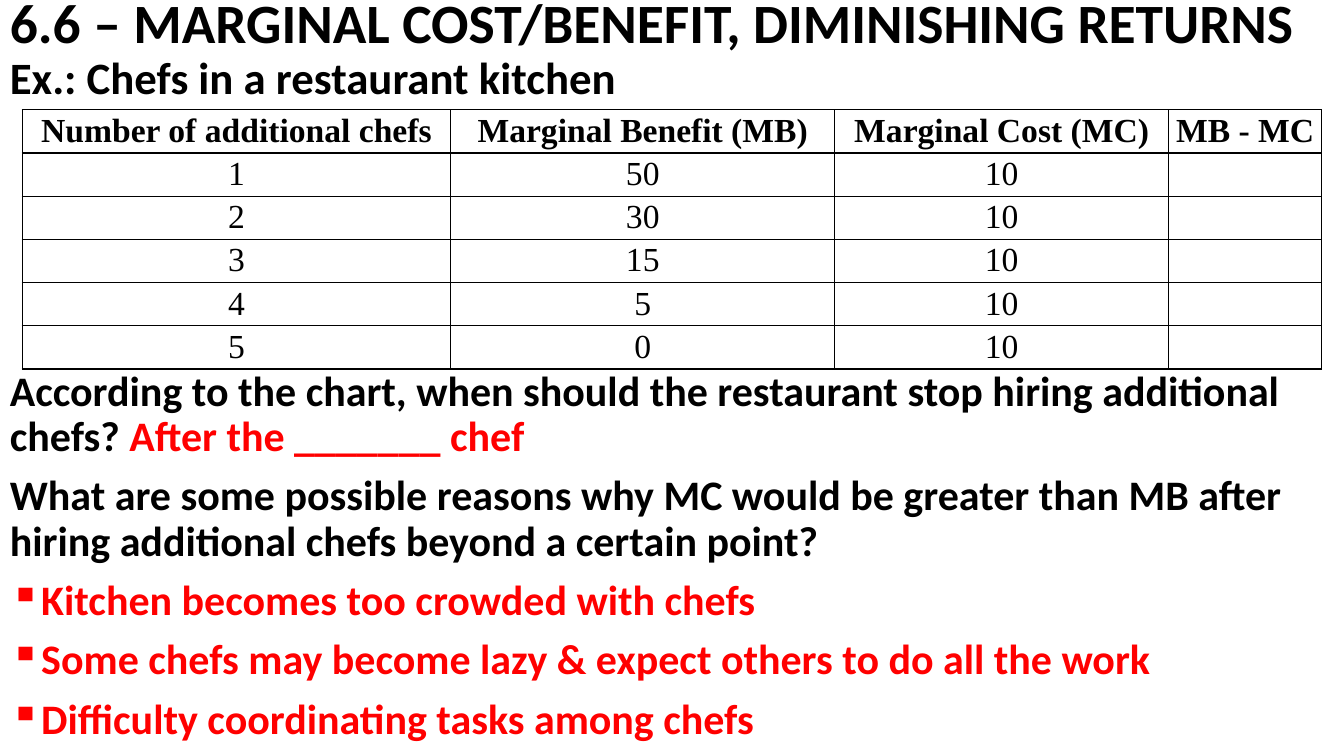
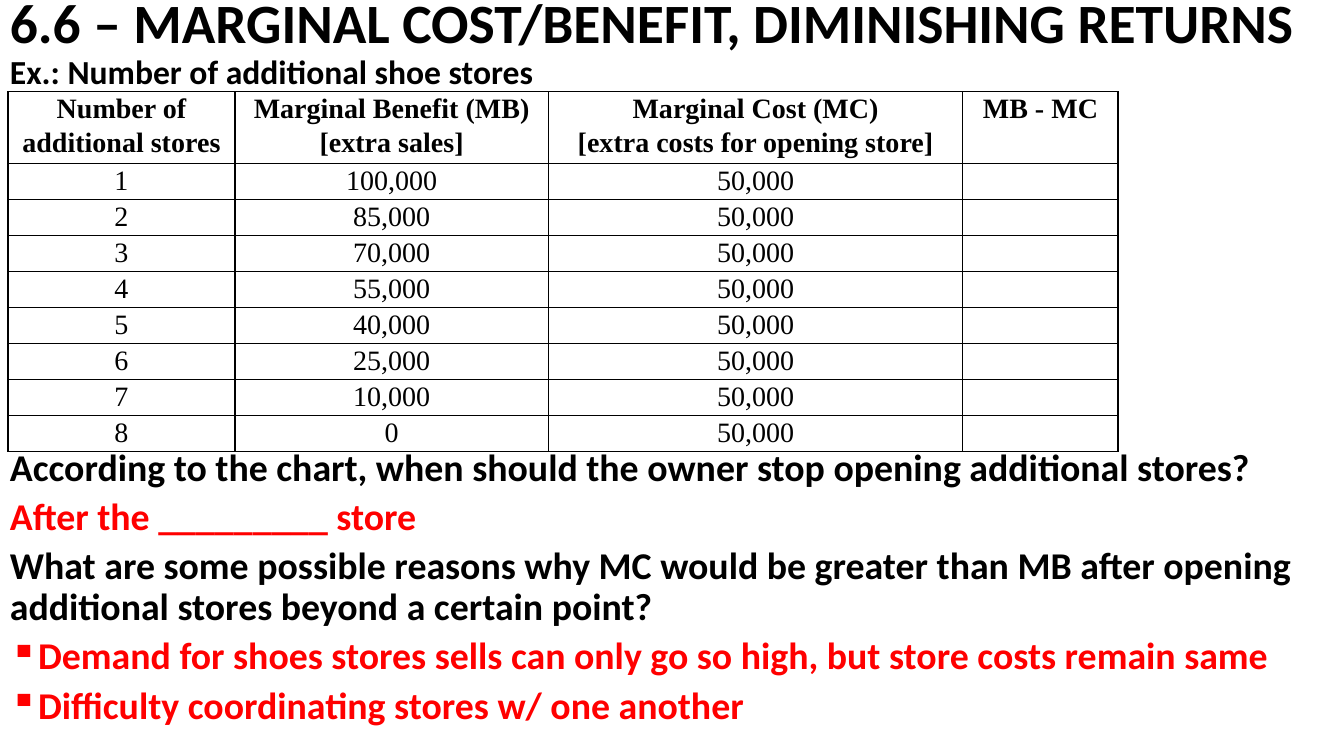
from dataclasses import dataclass

from lxml import etree
from pptx import Presentation
from pptx.dml.color import RGBColor
from pptx.enum.text import MSO_ANCHOR, PP_ALIGN
from pptx.oxml.ns import qn
from pptx.util import Inches, Pt

BLACK = RGBColor(0x00, 0x00, 0x00)
RED = RGBColor(0xFF, 0x00, 0x00)
MIDDLE = MSO_ANCHOR.MIDDLE
TOP = MSO_ANCHOR.TOP
CENTER = PP_ALIGN.CENTER

TEXT_FONT = "Calibri"
TABLE_FONT = "Times New Roman"
SLIDE_WIDTH = 13.33
SLIDE_HEIGHT = 7.5
TITLE_HEIGHT = SLIDE_HEIGHT / 15
TITLE = "6.6 – MARGINAL COST/BENEFIT, DIMINISHING RETURNS"
TITLE_SIZE = 39.6
BLANK_LAYOUT = 6
BULLET_INDENT = Inches(0.25)
CELL_MARGIN = Inches(0.07)


@dataclass(frozen=True)
class Span:
    text: str
    color: RGBColor = BLACK


@dataclass(frozen=True)
class Line:
    spans: tuple[Span, ...]
    bullet: bool = False


@dataclass(frozen=True)
class Grid:
    left: float
    top: float
    width: float
    column_weights: tuple[float, ...]
    header_height: float
    row_height: float
    size: float
    header: tuple[str, ...]
    benefits: tuple[str, ...]
    cost: str


@dataclass(frozen=True)
class Example:
    heading: str
    heading_size: float
    grid: Grid
    body_top: float
    body_size: float
    body_gap: float
    lines: tuple[Line, ...]


def question(text: str) -> Line:
    return Line((Span(text),))


def answer(text: str, bullet: bool = True) -> Line:
    return Line((Span(text, RED),), bullet)


EXAMPLES = (
    Example(
        heading="Ex.: Chefs in a restaurant kitchen",
        heading_size=32,
        grid=Grid(
            left=0.22, top=1.09, width=12.89,
            column_weights=(4.25, 3.81, 3.31, 1.52),
            header_height=0.39, row_height=0.39, size=24,
            header=("Number of additional chefs", "Marginal Benefit (MB)",
                    "Marginal Cost (MC)", "MB - MC"),
            benefits=("50", "30", "15", "5", "0"),
            cost="10",
        ),
        body_top=3.62,
        body_size=30,
        body_gap=10,
        lines=(
            Line((
                Span("According to the chart, when should the restaurant "
                     "stop hiring additional chefs? "),
                Span("After the _______ chef", RED),
            )),
            question("What are some possible reasons why MC would be greater "
                     "than MB after hiring additional chefs beyond a certain point?"),
            answer("Kitchen becomes too crowded with chefs"),
            answer("Some chefs may become lazy & expect others to do all the work"),
            answer("Difficulty coordinating tasks among chefs"),
        ),
    ),
    Example(
        heading="Ex.: Number of additional shoe stores",
        heading_size=24,
        grid=Grid(
            left=0.08, top=0.91, width=11.01,
            column_weights=(2.25, 3.11, 4.11, 1.54),
            header_height=0.7, row_height=0.33, size=20,
            header=("Number of additional stores",
                    "Marginal Benefit (MB)\n[extra sales]",
                    "Marginal Cost (MC)\n[extra costs for opening store]",
                    "MB - MC"),
            benefits=("100,000", "85,000", "70,000", "55,000",
                      "40,000", "25,000", "10,000", "0"),
            cost="50,000",
        ),
        body_top=4.4,
        body_size=27,
        body_gap=6,
        lines=(
            question("According to the chart, when should the owner stop "
                     "opening additional stores?"),
            answer("After the _________ store", bullet=False),
            question("What are some possible reasons why MC would be greater "
                     "than MB after opening additional stores beyond a certain point?"),
            answer("Demand for shoes stores sells can only go so high, "
                   "but store costs remain same"),
            answer("Difficulty coordinating stores w/ one another"),
        ),
    ),
)


def add_bullet(para) -> None:
    properties = para._p.get_or_add_pPr()
    properties.set("marL", str(BULLET_INDENT))
    properties.set("indent", str(-BULLET_INDENT))
    etree.SubElement(properties, qn("a:buChar")).set("char", "▪")


def add_text(page, top: float, height: float, lines: tuple[Line, ...],
             size: float, gap: float = 0, anchor=TOP) -> None:
    box = page.shapes.add_textbox(0, Inches(top), Inches(SLIDE_WIDTH), Inches(height))
    frame = box.text_frame
    frame.word_wrap = True
    frame.vertical_anchor = anchor
    for index, line in enumerate(lines):
        para = frame.add_paragraph() if index else frame.paragraphs[0]
        if line.bullet:
            add_bullet(para)
        para.line_spacing = 0.9
        para.space_before = Pt(gap if index else 0)
        para.font.name = TEXT_FONT
        para.font.size = Pt(size)
        para.font.bold = True
        para.font.color.rgb = line.spans[0].color
        for span in line.spans:
            run = para.add_run()
            run.text = span.text
            if span.color != line.spans[0].color:
                run.font.color.rgb = span.color


def add_borders(cell) -> None:
    properties = cell._tc.get_or_add_tcPr()
    for index, side in enumerate(("lnL", "lnR", "lnT", "lnB")):
        border = etree.Element(qn(f"a:{side}"), w=str(Pt(1)))
        fill = etree.SubElement(border, qn("a:solidFill"))
        etree.SubElement(fill, qn("a:srgbClr"), val=str(BLACK))
        properties.insert(index, border)


def fill_cell(cell, text: str, size: float, bold: bool) -> None:
    cell.fill.background()
    add_borders(cell)
    cell.margin_left = cell.margin_right = CELL_MARGIN
    cell.margin_top = cell.margin_bottom = 0
    cell.text = text
    for para in cell.text_frame.paragraphs:
        para.alignment = CENTER
        para.line_spacing = 1.07
        para.font.name = TABLE_FONT
        para.font.size = Pt(size)
        para.font.bold = bold
        para.font.color.rgb = BLACK


def add_grid(page, grid: Grid) -> None:
    rows = [grid.header]
    rows += [(str(number), benefit, grid.cost, "")
             for number, benefit in enumerate(grid.benefits, 1)]
    height = grid.header_height + grid.row_height * len(grid.benefits)
    table = page.shapes.add_table(
        len(rows), len(grid.header), Inches(grid.left), Inches(grid.top),
        Inches(grid.width), Inches(height)).table
    table.first_row = False
    table.horz_banding = False
    for column, weight in zip(table.columns, grid.column_weights):
        column.width = Inches(grid.width * weight / sum(grid.column_weights))
    for row_index, texts in enumerate(rows):
        is_header = row_index == 0
        table.rows[row_index].height = Inches(
            grid.header_height if is_header else grid.row_height)
        for column_index, text in enumerate(texts):
            fill_cell(table.cell(row_index, column_index), text, grid.size, is_header)


def add_example(deck, example: Example) -> None:
    page = deck.slides.add_slide(deck.slide_layouts[BLANK_LAYOUT])
    add_text(page, 0, TITLE_HEIGHT, (question(TITLE),), TITLE_SIZE, anchor=MIDDLE)
    add_text(page, TITLE_HEIGHT, example.grid.top - TITLE_HEIGHT,
             (question(example.heading),), example.heading_size)
    add_text(page, example.body_top, SLIDE_HEIGHT - example.body_top,
             example.lines, example.body_size, example.body_gap)
    add_grid(page, example.grid)


def main() -> None:
    deck = Presentation()
    deck.slide_width = Inches(SLIDE_WIDTH)
    deck.slide_height = Inches(SLIDE_HEIGHT)
    for example in EXAMPLES:
        add_example(deck, example)
    deck.save("out.pptx")


if __name__ == "__main__":
    main()
